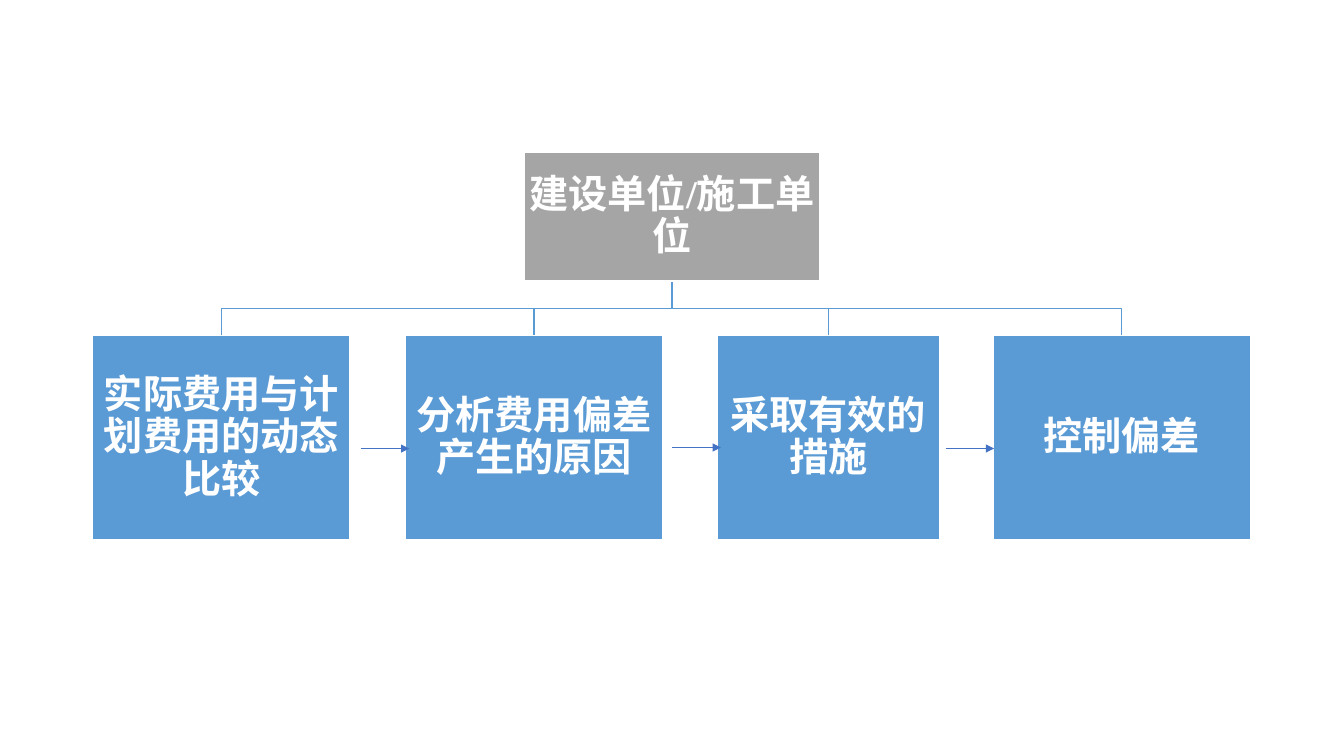
"""Build a slide showing the cost control steps of the owner and contractor."""
from lxml.etree import SubElement
from pptx import Presentation
from pptx.dml.color import RGBColor
from pptx.enum.shapes import MSO_CONNECTOR as Connector, MSO_SHAPE as Shape
from pptx.enum.text import MSO_ANCHOR as Anchor, PP_ALIGN as Align
from pptx.oxml.ns import qn
from pptx.util import Inches, Pt

WHITE, GRAY, BLUE, ARROW_BLUE = "FFFFFF", "A5A5A5", "5B9BD5", "4472C4"
ROOT = ("建设单位/施工单位", 5.2, 1.51, 2.93, 1.28)
STEP_TOP, STEP_HEIGHT = 3.33, 2.03
STEPS = [
    ("实际费用与计划费用的动态比较", 0.92, 2.55),
    ("分析费用偏差产生的原因", 4.02, 2.55),
    ("采取有效的措施", 7.11, 2.21),
    ("控制偏差", 9.85, 2.55),
]
ARROW_STARTS = [(3.58, 4.45), (6.67, 4.44), (9.38, 4.45)]
ARROW_LENGTH = 0.48
INSET = Inches(0.02)
FRAME_FORMAT = {
    "word_wrap": True, "vertical_anchor": Anchor.MIDDLE,
    "margin_left": INSET, "margin_right": INSET,
    "margin_top": INSET, "margin_bottom": INSET,
}
PARA_FORMAT = {"alignment": Align.CENTER, "line_spacing": 0.9}
FONT_FORMAT = {"name": "Times New Roman", "size": Pt(28), "bold": True}


def apply_format(target, values):
    for name, value in values.items():
        setattr(target, name, value)


def paint(part, color):
    part.solid()
    part.fore_color.rgb = RGBColor.from_string(color)


def set_line(line, color, width):
    paint(line.fill, color)
    line.width = Pt(width)


def add_box(page, text, left, top, width, height, color):
    box = page.shapes.add_shape(
        Shape.RECTANGLE, *map(Inches, (left, top, width, height)))
    box.shadow.inherit = False
    paint(box.fill, color)
    set_line(box.line, WHITE, 1)
    apply_format(box.text_frame, FRAME_FORMAT)
    para = box.text_frame.paragraphs[0]
    apply_format(para, PARA_FORMAT)
    span = para.add_run()
    span.text = text
    apply_format(span.font, FONT_FORMAT)
    paint(span.font.fill, WHITE)


def add_branch(page, start_x, start_y, end_x, end_y):
    middle_y = (start_y + end_y) / 2
    points = [(start_x, middle_y), (end_x, middle_y), (end_x, end_y)]
    builder = page.shapes.build_freeform(Inches(start_x), Inches(start_y))
    builder.add_line_segments(
        [(Inches(x), Inches(y)) for x, y in points], close=False)
    branch = builder.convert_to_shape()
    branch.shadow.inherit = False
    branch.fill.background()
    set_line(branch.line, BLUE, 1)


def add_arrow(page, left, top):
    arrow = page.shapes.add_connector(
        Connector.STRAIGHT, *map(Inches, (left, top, left + ARROW_LENGTH, top)))
    set_line(arrow.line, ARROW_BLUE, 0.5)
    SubElement(arrow.line._get_or_add_ln(), qn("a:tailEnd"), type="triangle")
    SubElement(arrow._element.spPr, qn("a:effectLst"))


def main():
    deck = Presentation()
    deck.slide_width, deck.slide_height = Inches(13.33), Inches(7.5)
    page = deck.slides.add_slide(deck.slide_layouts[6])
    _, root_left, root_top, root_width, root_height = ROOT
    root_x, root_bottom = root_left + root_width / 2, root_top + root_height
    for _, left, width in reversed(STEPS):
        add_branch(page, root_x, root_bottom, left + width / 2, STEP_TOP)
    add_box(page, *ROOT, GRAY)
    for text, left, width in STEPS:
        add_box(page, text, left, STEP_TOP, width, STEP_HEIGHT, BLUE)
    for left, top in ARROW_STARTS:
        add_arrow(page, left, top)
    deck.save("out.pptx")


if __name__ == "__main__":
    main()
